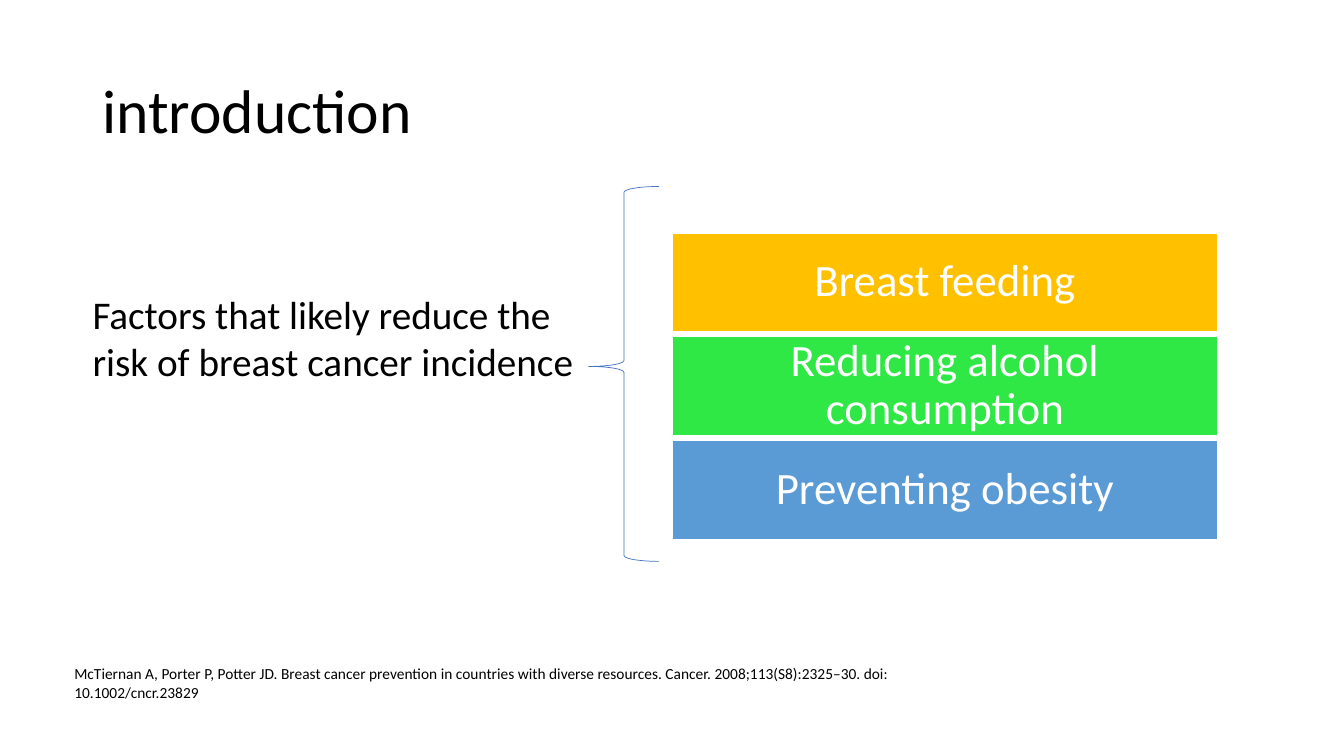
from pptx import Presentation
from pptx.dml.color import RGBColor
from pptx.enum.shapes import MSO_SHAPE
from pptx.enum.text import MSO_ANCHOR, PP_ALIGN
from pptx.util import Pt

FONT = "Calibri"
BLACK, WHITE = "000000", "FFFFFF"


def color(code):
    return RGBColor.from_string(code)


def write(shape, lines, size, ink=BLACK, align=PP_ALIGN.LEFT,
          anchor=MSO_ANCHOR.TOP, space=1.0, wrap=True):
    frame = shape.text_frame
    frame.word_wrap = wrap
    frame.vertical_anchor = anchor
    for i, line in enumerate(lines):
        para = frame.paragraphs[0] if i == 0 else frame.add_paragraph()
        para.alignment = align
        para.line_spacing = space
        run = para.add_run()
        run.text = line
        run.font.name = FONT
        run.font.size = Pt(size)
        run.font.color.rgb = color(ink)
    return frame


def add_text(slide, box, lines, size, **style):
    shape = slide.shapes.add_textbox(*map(Pt, box))
    return write(shape, lines, size, **style)


def add_form(slide, kind, box, edge, width):
    shape = slide.shapes.add_shape(kind, *map(Pt, box))
    shape.shadow.inherit = False
    shape.line.color.rgb = color(edge)
    shape.line.width = Pt(width)
    return shape


def add_bars(slide, box, bars, gap):
    left, top, width, height = box
    tall = (height - gap * (len(bars) - 1)) / len(bars)
    for i, (label, fill) in enumerate(bars):
        place = (left, top + i * (tall + gap), width, tall)
        bar = add_form(slide, MSO_SHAPE.RECTANGLE, place, WHITE, 1)
        bar.fill.solid()
        bar.fill.fore_color.rgb = color(fill)
        frame = write(bar, [label], 32, ink=WHITE, align=PP_ALIGN.CENTER,
                      anchor=MSO_ANCHOR.MIDDLE, space=0.9)
        frame.margin_left = frame.margin_right = Pt(6.5)
        frame.margin_top = frame.margin_bottom = Pt(6.5)


def add_brace(slide, box):
    brace = add_form(slide, MSO_SHAPE.LEFT_BRACE, box, "4472C4", 0.5)
    brace.fill.background()
    brace.adjustments[0] = 0.083
    brace.adjustments[1] = 0.48


def main():
    deck = Presentation()
    deck.slide_width, deck.slide_height = Pt(960), Pt(540)
    slide = deck.slides.add_slide(deck.slide_layouts[6])

    # Title
    add_text(slide, (66, 28.8, 828, 104.4), ["introduction"], 44,
             anchor=MSO_ANCHOR.MIDDLE, space=0.9)

    # Factors
    add_bars(slide, (480.2, 166.3, 389.5, 218.9), [
        ("Breast feeding", "FFC000"),
        ("Reducing alcohol consumption", "30E845"),
        ("Preventing obesity", "5B9BD5"),
    ], gap=3.6)

    # Lead-in and brace
    add_text(slide, (59, 203.8, 361.4, 97.2),
             ["Factors that likely reduce the",
              "risk of breast cancer incidence"],
             28, align=PP_ALIGN.JUSTIFY, wrap=False)
    add_brace(slide, (420.5, 133.2, 50.4, 267.8))

    # Citation
    add_text(slide, (46, 470.9, 684.5, 33.8),
             ["McTiernan A, Porter P, Potter JD. Breast cancer prevention in "
              "countries with diverse resources. Cancer. "
              "2008;113(S8):2325–30. doi: 10.1002/cncr.23829"], 11)

    deck.save("out.pptx")


if __name__ == "__main__":
    main()
